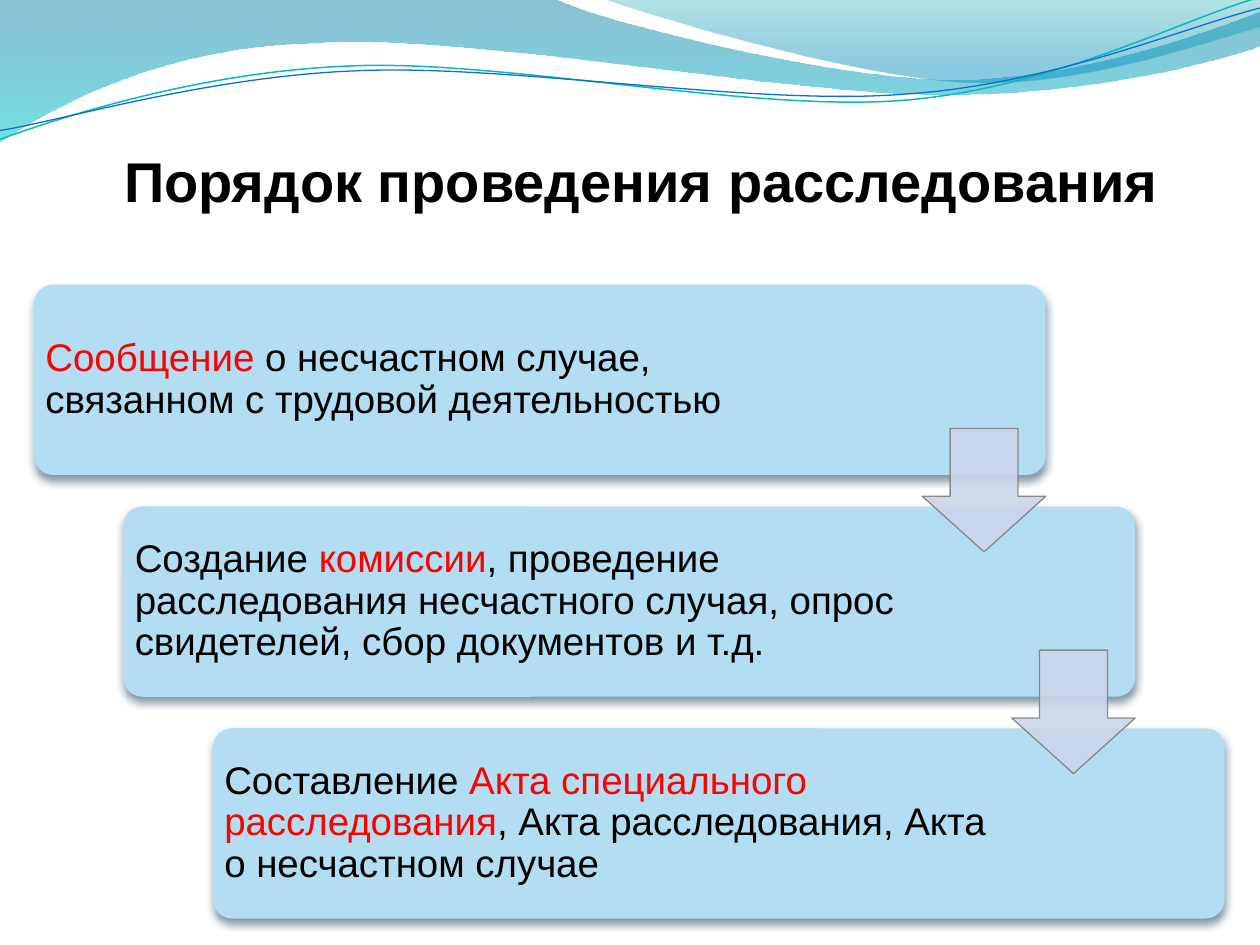
from lxml import etree
from pptx import Presentation
from pptx.dml.color import RGBColor
from pptx.enum.shapes import MSO_SHAPE
from pptx.enum.text import MSO_ANCHOR, PP_ALIGN
from pptx.oxml.ns import qn
from pptx.util import Pt

SCALE = 9144  # EMU in one px, 100 px to the inch
FONT = "Arial"
BLACK, RED = "000000", "FF0000"
CARD_WIDTH, CARD_HEIGHT = 803, 151
STEP_X, STEP_Y = 71, 176
ARROW_SIZE, ARROW_TOP = 98, 114
LINE_ROTATION = 357.3

# Each wave is a start point followed by cubic curves (6 numbers) and lines (2 numbers)
WAVES = [
    ((0, 0), [(440, -1), (476, 17, 664, 63, 758, 63), (853, 63, 958, 26, 1000, 9),
              (1001, 36), (983, 44, 870, 76, 746, 75), (622, 75, 382, 28, 257, 34),
              (129, 36, 46, 83, -1, 113)],
     [(0, "0074A1", 45), (1, "00C6CF", 55)]),
    ((479, -1), [(509, 11, 682, 62, 769, 65), (856, 69, 961, 32, 1000, 21), (1000, 0)],
     [(0, "00A1A9", 30), (0.8, "008BBF", 45)]),
]
# Thin lines, given before rotation
WAVE_LINES = [
    ((-2, 87), [(47, 72, 158, 41, 278, 42), (396, 42, 591, 93, 712, 90),
                (832, 87, 940, 36, 1000, 22)], "0AB8BF", 0.85),
    ((-2, 80), [(46, 75, 164, 45, 283, 46), (403, 46, 596, 89, 716, 85),
                (835, 83, 942, 42, 1002, 30)], "0F6FC6", 0.75),
]
# Text width, then runs of text with colour
STEPS = [
    (649, [("Сообщение", RED),
           (" о несчастном случае, связанном с трудовой деятельностью", BLACK)]),
    (634, [("Создание ", BLACK), ("комиссии", RED),
           (", проведение расследования несчастного случая, опрос свидетелей, "
            "сбор документов и т.д.", BLACK)]),
    (634, [("Составление ", BLACK), ("Акта специального расследования", RED),
           (", Акта расследования, Акта о несчастном случае", BLACK)]),
]


def px(*lengths):
    return [length * SCALE for length in lengths]


def color(hex_string):
    return RGBColor.from_string(hex_string)


def set_alpha(color_element, percent):
    etree.SubElement(color_element, qn("a:alpha"), val=str(percent * 1000))


def add_outline(slide, start, segments, close):
    builder = slide.shapes.build_freeform(*px(*start), scale=1.0)
    builder.add_line_segments([px(*segment[-2:]) for segment in segments], close=close)
    shape = builder.convert_to_shape()
    shape.shadow.inherit = False
    # Bend the straight segments that have control points
    line_elements = list(shape._element.spPr.iter(qn("a:lnTo")))
    for element, segment in zip(line_elements, segments):
        if len(segment) == 6:
            element.tag = qn("a:cubicBezTo")
            for index in (0, 1):
                x, y = px(*segment[2 * index:2 * index + 2])
                point = etree.Element(qn("a:pt"), x=str(x - shape.left), y=str(y - shape.top))
                element.insert(index, point)
    return shape


def add_waves(slide):
    for start, segments, stops in WAVES:
        wave = add_outline(slide, start, segments, close=True)
        wave.line.fill.background()
        wave.fill.gradient()
        wave.fill.gradient_angle = 270
        for stop, (position, hex_string, _) in zip(wave.fill.gradient_stops, stops):
            stop.position = position
            stop.color.rgb = color(hex_string)
        for element, stop in zip(wave._element.spPr.iter(qn("a:srgbClr")), stops):
            set_alpha(element, stop[2])
    for start, segments, hex_string, width in WAVE_LINES:
        wave_line = add_outline(slide, start, segments, close=False)
        wave_line.rotation = LINE_ROTATION
        wave_line.fill.background()
        wave_line.line.color.rgb = color(hex_string)
        wave_line.line.width = Pt(width)


def add_text(slide, box, runs, size, margins, anchor):
    frame = slide.shapes.add_textbox(*px(*box)).text_frame
    frame.word_wrap = True
    frame.vertical_anchor = anchor
    (frame.margin_left, frame.margin_top,
     frame.margin_right, frame.margin_bottom) = px(*margins)
    paragraph = frame.paragraphs[0]
    for text, hex_string in runs:
        run = paragraph.add_run()
        run.text = text
        run.font.name = FONT
        run.font.size = Pt(size)
        run.font.color.rgb = color(hex_string)
    return paragraph


def add_title(slide, box):
    paragraph = add_text(slide, box, [("Порядок проведения расследования", BLACK)],
                         32, (0, 5, 0, 0), MSO_ANCHOR.BOTTOM)
    paragraph.alignment = PP_ALIGN.CENTER
    paragraph.runs[0].font.bold = True


def add_card_shadow(shape):
    shape.shadow.inherit = False
    effects = shape._element.spPr.find(qn("a:effectLst"))
    shadow = etree.SubElement(effects, qn("a:outerShdw"), blurRad=str(Pt(4.5)),
                              dist=str(Pt(3)), dir="5400000", rotWithShape="0")
    set_alpha(etree.SubElement(shadow, qn("a:srgbClr"), val="042747"), 48)


def add_card(slide, left, top, text_width, runs):
    card = slide.shapes.add_shape(MSO_SHAPE.ROUNDED_RECTANGLE,
                                  *px(left, top, CARD_WIDTH, CARD_HEIGHT))
    card.adjustments[0] = 0.1
    card.fill.solid()
    card.fill.fore_color.rgb = color("B3DDF2")
    card.line.fill.background()
    add_card_shadow(card)
    paragraph = add_text(slide, (left, top, text_width, CARD_HEIGHT), runs,
                         22, (9, 9, 9, 9), MSO_ANCHOR.MIDDLE)
    paragraph.line_spacing = 0.9


def add_arrow(slide, left, top):
    arrow = slide.shapes.add_shape(MSO_SHAPE.DOWN_ARROW,
                                   *px(left, top, ARROW_SIZE, ARROW_SIZE))
    arrow.adjustments[0], arrow.adjustments[1] = 0.55, 0.45
    arrow.shadow.inherit = False
    arrow.fill.solid()
    arrow.fill.fore_color.rgb = color("CCD5EA")
    arrow.line.color.rgb = color("808080")
    arrow.line.width = Pt(0.75)
    for element in arrow._element.spPr.iter(qn("a:srgbClr")):
        set_alpha(element, 90)


def add_staircase(slide, left, top):
    corners = [(left + STEP_X * i, top + STEP_Y * i) for i in range(len(STEPS))]
    for corner, (text_width, runs) in zip(corners, STEPS):
        add_card(slide, *corner, text_width, runs)
    # Arrows lead from each card to the next
    for x, y in corners[:-1]:
        add_arrow(slide, x + CARD_WIDTH - ARROW_SIZE, y + ARROW_TOP)


def main():
    presentation = Presentation()
    presentation.slide_width, presentation.slide_height = px(1000, 750)
    slide = presentation.slides.add_slide(presentation.slide_layouts[6])
    add_waves(slide)
    add_title(slide, (59, 99, 900, 71))
    add_staircase(slide, 27, 226)
    presentation.save("out.pptx")


if __name__ == "__main__":
    main()
